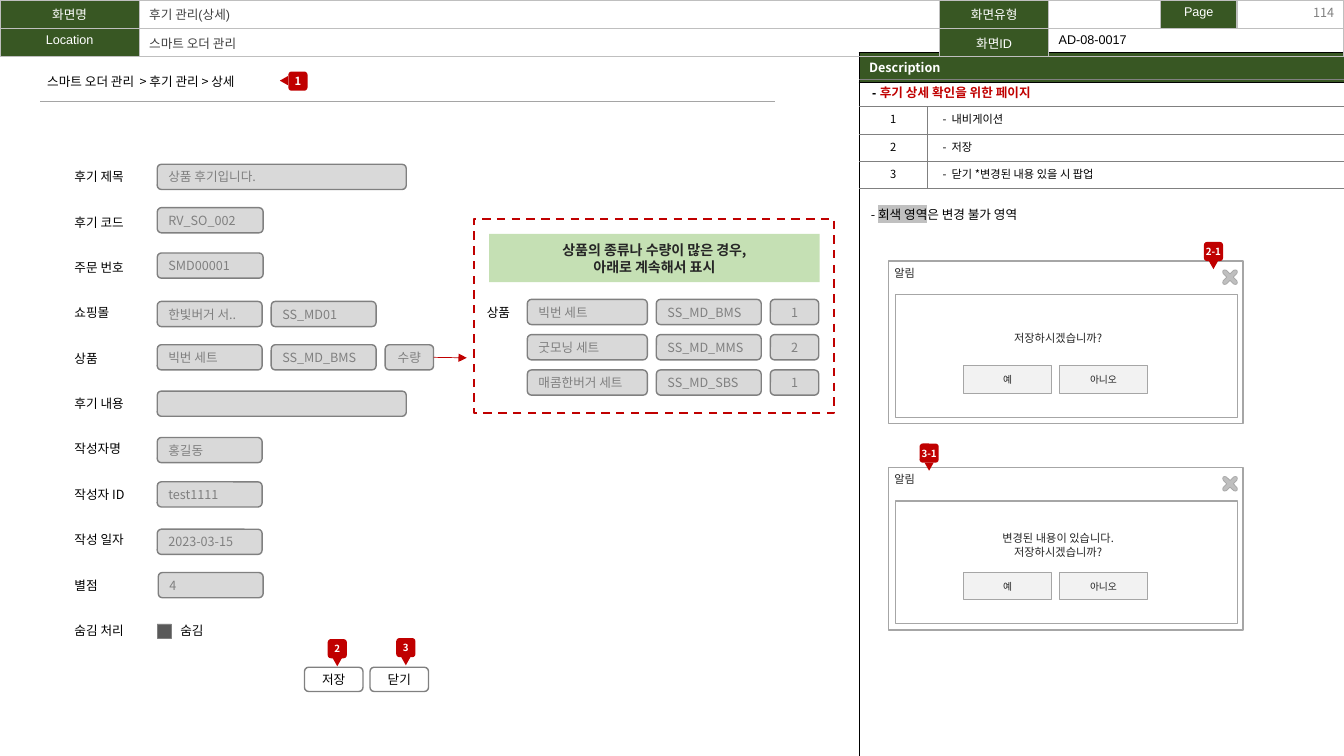
from lxml import etree
from pptx import Presentation
from pptx.dml.color import RGBColor
from pptx.enum.dml import MSO_LINE
from pptx.enum.shapes import MSO_CONNECTOR, MSO_SHAPE
from pptx.enum.text import MSO_ANCHOR, PP_ALIGN
from pptx.oxml.ns import qn
from pptx.util import Emu, Inches, Pt

RECT = MSO_SHAPE.RECTANGLE
ROUND = MSO_SHAPE.ROUNDED_RECTANGLE
TRIANGLE = MSO_SHAPE.ISOSCELES_TRIANGLE
STRAIGHT = MSO_CONNECTOR.STRAIGHT
DASH = MSO_LINE.DASH
LEFT, CENTER, RIGHT = PP_ALIGN.LEFT, PP_ALIGN.CENTER, PP_ALIGN.RIGHT
TOP, MIDDLE = MSO_ANCHOR.TOP, MSO_ANCHOR.MIDDLE

KR, LATIN = "Noto Sans CJK KR", "Arial"
NO_STYLE = "{2D5ABB26-0587-4C30-8999-92F81FD0307C}"
GREEN, RED, GRAY, INK = "385723", "C00000", "808080", "262626"
BORDER, FIELD, WHITE, BLACK = "A6A6A6", "D9D9D9", "FFFFFF", "000000"


def rgb(color):
    return RGBColor.from_string(color)


def add_run(p, text, size=9, color=BLACK, bold=False, font=KR, highlight=None):
    r = p.add_run()
    r.text = text
    r.font.size = Pt(size)
    r.font.bold = bold
    r.font.color.rgb = rgb(color)
    rpr = r.font._element
    if highlight:
        mark = etree.SubElement(rpr, qn("a:highlight"))
        etree.SubElement(mark, qn("a:srgbClr"), val=highlight)
    r.font.name = font
    etree.SubElement(rpr, qn("a:ea"), typeface=KR)


def write(tf, lines, align=LEFT, gap=0, exact=True, size=9, **style):
    for i, line in enumerate(lines):
        p = tf.paragraphs[0] if i == 0 else tf.add_paragraph()
        p.alignment = align
        if exact:
            p.line_spacing = Pt(size * 1.2)
        if i and gap:
            p.space_before = Pt(gap)
        add_run(p, line, size, **style)


def set_margins(tf, x, y):
    tf.margin_left = tf.margin_right = Inches(x)
    tf.margin_top = tf.margin_bottom = Inches(y)


def paint(sp, fill, line, width):
    sp.shadow.inherit = False
    if fill:
        sp.fill.solid()
        sp.fill.fore_color.rgb = rgb(fill)
    else:
        sp.fill.background()
    if line:
        sp.line.color.rgb = rgb(line)
        sp.line.width = Pt(width)
    else:
        sp.line.fill.background()


def add_box(shapes, kind, x, y, w, h, fill, line=None, width=1, lines=(), align=CENTER, **style):
    sp = shapes.add_shape(kind, Inches(x), Inches(y), Inches(w), Inches(h))
    paint(sp, fill, line, width)
    sp.text_frame.vertical_anchor = MIDDLE
    write(sp.text_frame, lines, align, **style)
    return sp


def add_text(shapes, x, y, w, h, lines, anchor=TOP, margins=(0.1, 0.05), **style):
    tf = shapes.add_textbox(Inches(x), Inches(y), Inches(w), Inches(h)).text_frame
    tf.word_wrap = True
    tf.vertical_anchor = anchor
    set_margins(tf, *margins)
    write(tf, lines, **style)
    return tf


def add_field(shapes, x, y, w, text, align=LEFT):
    return add_box(shapes, ROUND, x, y, w, 0.25, FIELD, GRAY, 1, [text] if text else [], align, color=GRAY)


def add_line(shapes, x1, y1, x2, y2, color):
    c = shapes.add_connector(STRAIGHT, Inches(x1), Inches(y1), Inches(x2), Inches(y2))
    c.line.color.rgb = rgb(color)
    c.line.width = Pt(0.5)
    etree.SubElement(c._element.spPr, qn("a:effectLst"))
    return c


def add_marker(shapes, x, y, text, size=7, point_left=False):
    group = shapes.add_group_shape().shapes
    dx, dy, turn = (-0.09, 0.05, 270) if point_left else (0.05, 0.19, 180)
    add_box(group, TRIANGLE, x + dx, y + dy, 0.09, 0.08, RED).rotation = turn
    sp = add_box(group, ROUND, x, y, 0.19, 0.19, RED, lines=[text], size=size, color=WHITE, bold=True)
    sp.text_frame.word_wrap = False
    set_margins(sp.text_frame, 0, 0)


def add_close_icon(shapes, cx, cy):
    arm = [(-3.3, 0), (-6.8, -3.6), (-7.2, -5.2), (-6.8, -6.8), (-5.2, -7.2), (-3.6, -6.8)]
    points = []
    for _ in range(4):
        points += [(Inches(cx + x / 100), Inches(cy + y / 100)) for x, y in arm]
        arm = [(-y, x) for x, y in arm]
    builder = shapes.build_freeform(*points[0])
    builder.add_line_segments(points[1:], close=True)
    paint(builder.convert_to_shape(), "BFBFBF", BORDER, 0.5)


def add_dialog(shapes, y, question):
    add_box(shapes, RECT, 8.81, y, 3.52, 1.61, WHITE, BORDER, 1)
    add_box(shapes, RECT, 8.88, y + 0.33, 3.39, 1.22, WHITE, BORDER, 0.75)
    for x, answer in ((9.56, "예"), (10.51, "아니오")):
        sp = add_box(shapes, ROUND, x, y + 1.04, 0.87, 0.27, "F2F2F2", BORDER, 0.5, [answer], size=7, color=INK)
        sp.adjustments[0] = 0
    add_close_icon(shapes, 12.2, y + 0.16)
    add_text(shapes, 8.92, y + 0.49, 3.15, 0.55, question, MIDDLE, (0.06, 0.03), align=CENTER, size=8, color=INK)
    add_text(shapes, 8.81, y + 0.02, 0.47, 0.21, ["알림"], TOP, (0.06, 0.03), size=8, color=INK)


def add_grid(shapes, x, y, cols, rows):
    frame = shapes.add_table(len(rows), len(cols), Inches(x), Inches(y), Inches(sum(cols)), Inches(sum(rows)))
    table = frame.table
    table.first_row = table.horz_banding = False
    table._tbl.tblPr.find(qn("a:tableStyleId")).text = NO_STYLE
    for col, width in zip(table.columns, cols):
        col.width = Inches(width)
    for row, height in zip(table.rows, rows):
        row.height = Inches(height)
    return table


def style_cell(cell, sides, line, width, fill=None):
    tcpr = cell._tc.get_or_add_tcPr()
    for side in sides:
        ln = etree.SubElement(tcpr, qn("a:ln" + side), w=str(Emu(Pt(width))))
        etree.SubElement(etree.SubElement(ln, qn("a:solidFill")), qn("a:srgbClr"), val=line)
    if fill:
        cell.fill.solid()
        cell.fill.fore_color.rgb = rgb(fill)
    else:
        cell.fill.background()
    if not cell.text_frame.text:
        cell.text_frame.paragraphs[0]._p.get_or_add_endParaRPr().set("sz", "900")


def add_description(shapes):
    panel = add_grid(shapes, 8.52, 0.52, [4.81], [0.3, 6.68])
    write(panel.cell(0, 0).text_frame, ["Description"], color=WHITE, bold=True, exact=False)
    for row, fill in enumerate((GREEN, None)):
        style_cell(panel.cell(row, 0), "LRTB", BLACK, 0.5, fill)

    notes = add_grid(shapes, 8.52, 0.79, [0.68, 4.13], [0.27] * 4)
    title = notes.cell(0, 0)
    title.merge(notes.cell(0, 1))
    title.margin_left = Inches(0.13)
    write(title.text_frame, ["- "], bold=True, font=LATIN)
    add_run(title.text_frame.paragraphs[0], "후기 상세 확인을 위한 페이지", 9, RED, True, LATIN)
    for row, note in enumerate(("내비게이션", "저장", "닫기 *변경된 내용 있을 시 팝업"), 1):
        write(notes.cell(row, 0).text_frame, [str(row)], CENTER, size=8)
        notes.cell(row, 1).margin_left = Inches(0.15)
        write(notes.cell(row, 1).text_frame, ["-  " + note], size=8)
    for row in range(4):
        for col in range(2):
            cell = notes.cell(row, col)
            cell.vertical_anchor = MIDDLE
            style_cell(cell, "LTB" if row and col else "TB", GRAY, 0.75)


def add_header(shapes):
    rows = [
        ["화면명", "후기 관리(상세)", "화면유형", "", "Page", ""],
        ["Location", "스마트 오더 관리", "화면ID", "AD-08-0017", "", ""],
    ]
    table = add_grid(shapes, 0, 0, [1.38, 7.94, 1.08, 1.11, 0.76, 1.06], [0.28, 0.28])
    table.cell(1, 3).merge(table.cell(1, 5))
    for i, row in enumerate(rows):
        for j, text in enumerate(row):
            cell = table.cell(i, j)
            label = j in (0, 2) or text == "Page"
            color = WHITE if label else "404040" if j == 1 else BLACK
            if text:
                write(cell.text_frame, [text], CENTER if label else LEFT, exact=False, color=color, font=LATIN)
            style_cell(cell, "LRTB", "BFBFBF", 1, GREEN if label else None)
    add_text(shapes, 10.33, -0.08, 3, 0.4, ["114"], MIDDLE, align=RIGHT, color=GRAY)


def add_form(shapes):
    labels = ["후기 제목", "후기 코드", "주문 번호", "쇼핑몰", "상품", "후기 내용",
              "작성자명", "작성자 ID", "작성 일자", "별점", "숨김 처리"]
    add_text(shapes, 0.64, 1.63, 1.12, 4.95, labels, gap=21.6)
    fields = [
        (1.56, 1.63, 2.47, "상품 후기입니다."), (1.56, 2.06, 1.05, "RV_SO_002"),
        (1.56, 2.51, 1.05, "SMD00001"), (1.56, 2.99, 1.04, "한빛버거 서.."),
        (2.69, 2.99, 1.04, "SS_MD01"), (1.56, 3.42, 1.04, "빅번 세트"),
        (2.69, 3.42, 1.04, "SS_MD_BMS"), (1.56, 3.88, 2.47, ""),
        (1.56, 4.34, 1.04, "홍길동"), (1.56, 4.78, 1.04, "test1111"),
        (1.56, 5.25, 1.04, "2023-03-15"), (1.57, 5.68, 1.04, "4"),
    ]
    for field in fields:
        add_field(shapes, *field)
    add_box(shapes, RECT, 1.56, 6.19, 0.14, 0.14, "595959", GRAY, 0.5)
    add_text(shapes, 1.69, 6.13, 0.55, 0.25, ["숨김"])
    for x, text in ((3.02, "저장"), (3.67, "닫기")):
        add_box(shapes, ROUND, x, 6.62, 0.58, 0.24, WHITE, GRAY, 1, [text])
    return add_field(shapes, 3.82, 3.42, 0.48, "수량", CENTER)


def add_products(shapes, quantity):
    products = [("빅번 세트", "SS_MD_BMS", "1"), ("굿모닝 세트", "SS_MD_MMS", "2"), ("매콤한버거 세트", "SS_MD_SBS", "1")]
    for i, (name, code, count) in enumerate(products):
        y = 2.97 + 0.35 * i
        add_field(shapes, 5.23, y, 1.19, name)
        add_field(shapes, 6.51, y, 1.04, code)
        add_field(shapes, 7.64, y, 0.48, count, CENTER)
    add_box(shapes, RECT, 4.7, 2.17, 3.57, 1.93, None, RED, 1.5).line.dash_style = DASH
    arrow = add_line(shapes, 4.3, 3.55, 4.63, 3.55, RED)
    arrow.begin_connect(quantity, 3)
    etree.SubElement(arrow.line._get_or_add_ln(), qn("a:tailEnd"), type="triangle")
    add_box(shapes, RECT, 4.85, 2.32, 3.28, 0.48, "C5E0B4", size=10, color=INK, bold=True,
            lines=["상품의 종류나 수량이 많은 경우,", "아래로 계속해서 표시"])
    add_text(shapes, 4.73, 2.97, 1.12, 0.25, ["상품"], MIDDLE)


def main():
    prs = Presentation()
    prs.slide_width, prs.slide_height = Inches(13.33), Inches(7.5)
    shapes = prs.slides.add_slide(prs.slide_layouts[6]).shapes
    add_description(shapes)
    add_header(shapes)
    add_text(shapes, 0.37, 0.68, 2.49, 0.25, ["스마트 오더 관리  > 후기 관리 > 상세"])
    add_line(shapes, 0.4, 1.01, 7.69, 1.01, "A5A5A5")
    quantity = add_form(shapes)
    add_products(shapes, quantity)
    p = add_text(shapes, 8.54, 2, 3.5, 0.25, ["- "]).paragraphs[0]
    add_run(p, "회색 영역", highlight="C0C0C0")
    add_run(p, "은 변경 불가 영역")
    add_dialog(shapes, 2.59, ["저장하시겠습니까?"])
    add_dialog(shapes, 4.64, ["변경된 내용이 있습니다.", "저장하시겠습니까?"])
    add_marker(shapes, 2.86, 0.71, "1", 8, True)
    for x, y, text in ((3.25, 6.34, "2"), (3.93, 6.33, "3"), (11.94, 2.4, "2-1"), (9.12, 4.4, "3-1")):
        add_marker(shapes, x, y, text)
    prs.save("out.pptx")


if __name__ == "__main__":
    main()
